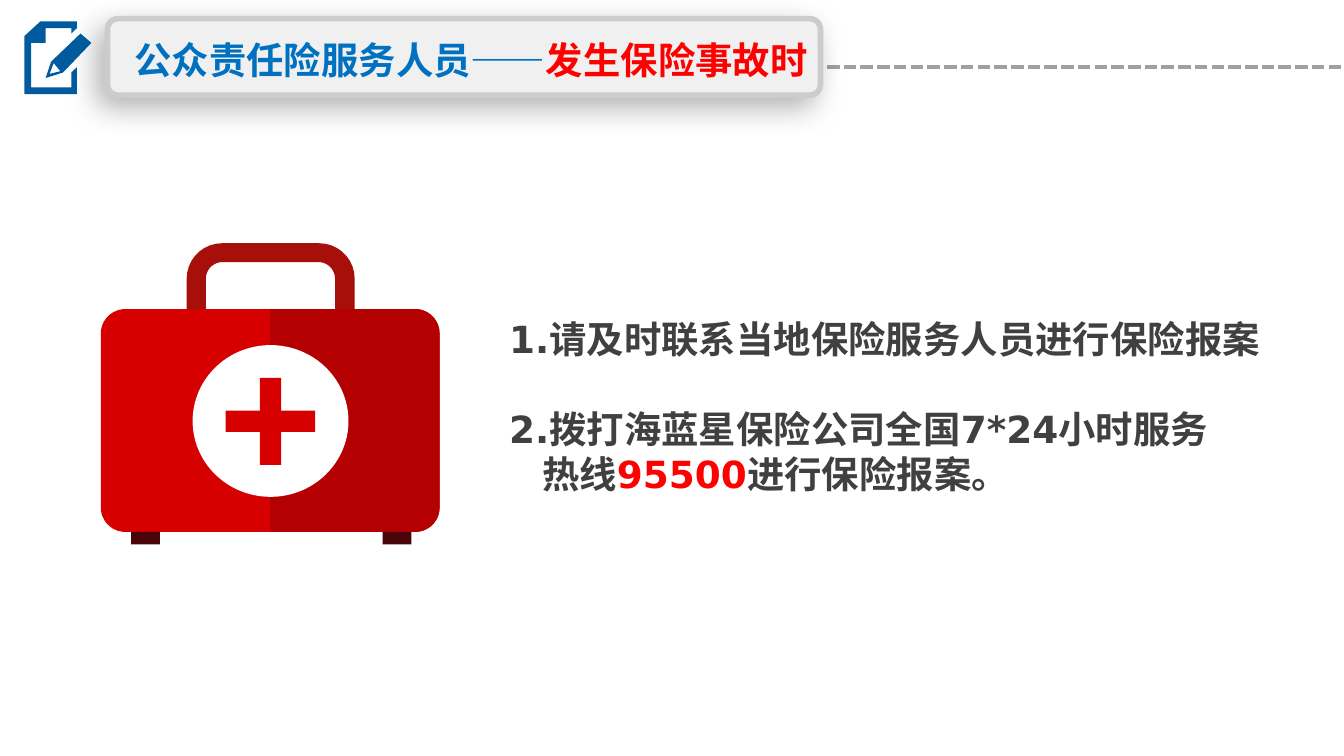
"""Build the slide on what to do when an insured accident happens."""
from math import cos, radians, sin

from lxml import etree
from pptx import Presentation
from pptx.dml.color import RGBColor as Color
from pptx.enum.dml import MSO_LINE as Dash
from pptx.enum.shapes import MSO_CONNECTOR as Link, MSO_SHAPE as Kind
from pptx.enum.text import MSO_ANCHOR as Anchor, MSO_AUTO_SIZE as Fit, PP_ALIGN as Align
from pptx.oxml import parse_xml
from pptx.oxml.ns import nsdecls, qn
from pptx.util import Pt

BLUE = Color(0x00, 0x70, 0xC0)
NAVY = Color(0x00, 0x5A, 0x9E)
RED = Color(0xFF, 0x00, 0x00)
DARK = Color(0x40, 0x40, 0x40)
GREY = Color(0xA0, 0xA0, 0xA0)
PALE = Color(0xF0, 0xF0, 0xF0)
EDGE = Color(0xCC, 0xCC, 0xCC)
WHITE = Color(0xFF, 0xFF, 0xFF)
CASE = Color(0xD6, 0x00, 0x00)
SHADE = Color(0xB4, 0x00, 0x01)
GRIP = Color(0xA7, 0x0F, 0x0A)
FOOT = Color(0x4A, 0x05, 0x0A)


def arc(x, y, r, start):
    turns = [radians(start + 10 * i) for i in range(10)]
    return [(x + r * cos(t), y + r * sin(t)) for t in turns]


def write(para, runs, face):
    for text, color in runs:
        run = para.add_run()
        run.text = text
        font = run.font
        font.name, font.size, font.bold = face, Pt(20), True
        font.color.rgb = color
        etree.SubElement(font._element, qn("a:ea"), typeface=face)


deck = Presentation()
deck.slide_width, deck.slide_height = Pt(720), Pt(405)
slide = deck.slides.add_slide(deck.slide_layouts[5])
shapes = slide.shapes

rule = shapes.add_connector(Link.STRAIGHT, Pt(718.5), Pt(36), Pt(228), Pt(36))
rule.line.color.rgb, rule.line.width = GREY, Pt(2.25)
rule.line.dash_style = Dash.SQUARE_DOT
etree.SubElement(rule._element.spPr, qn("a:effectLst"))

panel = shapes.add_shape(Kind.ROUNDED_RECTANGLE, Pt(57.6), Pt(10), Pt(382), Pt(41))
panel.adjustments[0] = 0.14
panel.fill.solid()
panel.fill.fore_color.rgb = PALE
panel.line.color.rgb, panel.line.width = EDGE, Pt(3)
panel._element.spPr.append(parse_xml(
    f'<a:effectLst {nsdecls("a")}><a:outerShdw blurRad="{Pt(16)}" dist="{Pt(7)}" '
    'dir="8100000" algn="tr" rotWithShape="0"><a:srgbClr val="000000">'
    '<a:alpha val="30000"/></a:srgbClr></a:outerShdw></a:effectLst>'))

icon = shapes.add_group_shape()
bag = shapes.add_group_shape()

page = [(38.2, 46.8), (16.6, 46.8), (16.6, 23), (24.5, 23), (24.5, 15.1),
        (38.2, 15.1), (38.2, 18), (41.2, 15.1), (41.2, 11.5), (21.6, 11.5),
        (13, 19.4), (13, 50.4), (41.2, 50.4), (41.2, 36), (38.2, 38.9)]
pen = [(24.5, 41.8), (27.4, 33.1), (43.2, 18), (49, 23), (33.8, 38.9)]
nib = [(32.4, 38.2), (26.6, 39.6), (28.8, 33.8)]
half = [(144.7, 165.6), *arc(222.5, 178.6, 13, 270), *arc(222.5, 272, 13, 0), (144.7, 285)]
grip = [(100, 165.6), *arc(119, 149.3, 19, 180), *arc(171, 149.3, 19, 270), (190, 165.6),
        (179.5, 165.6), *arc(170.6, 149.3, 8.9, 270)[::-1],
        *arc(119.2, 149.3, 8.9, 180)[::-1], (110.3, 165.6)]

body = bag.shapes.add_shape(Kind.ROUNDED_RECTANGLE, Pt(54), Pt(165.6), Pt(181.5), Pt(119.4))
body.adjustments[0] = 0.11
parts = [(body, CASE)]
for group, loops, color in [(icon, [page], NAVY), (icon, [pen, nib], NAVY),
                            (bag, [half], SHADE), (bag, [grip], GRIP)]:
    first, *rest = [[(Pt(x), Pt(y)) for x, y in loop] for loop in loops]
    path = group.shapes.build_freeform(*first[0])
    path.add_line_segments(first[1:])
    for loop in rest:
        path.move_to(*loop[0])
        path.add_line_segments(loop[1:])
    parts.append((path.convert_to_shape(), color))

for kind, box, color in [(Kind.RECTANGLE, (70.3, 285, 15.4, 6.7), FOOT),
                         (Kind.RECTANGLE, (205, 285, 15.4, 6.7), FOOT),
                         (Kind.OVAL, (103.2, 184.9, 83.5, 81.3), WHITE),
                         (Kind.RECTANGLE, (139.2, 202.4, 11.4, 46.7), CASE),
                         (Kind.RECTANGLE, (120.9, 220, 48, 11.4), CASE)]:
    parts.append((bag.shapes.add_shape(kind, *map(Pt, box)), color))

for part, color in parts:
    part.shadow.inherit = False
    part.fill.solid()
    part.fill.fore_color.rgb = color
    part.line.fill.background()

title = shapes.title
title.left, title.top, title.width, title.height = Pt(64.8), Pt(16.5), Pt(417), Pt(55)
shapes._spTree.append(title._element)
frame = title.text_frame
frame.word_wrap, frame.auto_size = True, Fit.NONE
frame.vertical_anchor = Anchor.TOP
head = frame.paragraphs[0]
head.alignment, head.line_spacing = Align.LEFT, Pt(24)
write(head, [("公众责任险服务人员——", BLUE), ("发生保险事故时", RED)], "Noto Sans CJK SC")

steps = shapes.add_textbox(Pt(265.7), Pt(165.6), Pt(429), Pt(104.4)).text_frame
steps.word_wrap = True
for i, (gap, indent, runs) in enumerate([
        (0, 0, [("1.请及时联系当地保险服务人员进行保险报案", DARK)]),
        (24, 0, [("2.拨打海蓝星保险公司全国7*24小时服务", DARK)]),
        (0, 17.7, [("热线", DARK), ("95500", RED), ("进行保险报案。", DARK)])]):
    para = steps.add_paragraph() if i else steps.paragraphs[0]
    para.line_spacing, para.space_before = Pt(24.2), Pt(gap)
    para._p.get_or_add_pPr().set("marL", str(Pt(indent)))
    write(para, runs, "DejaVu Sans")

deck.save("out.pptx")
